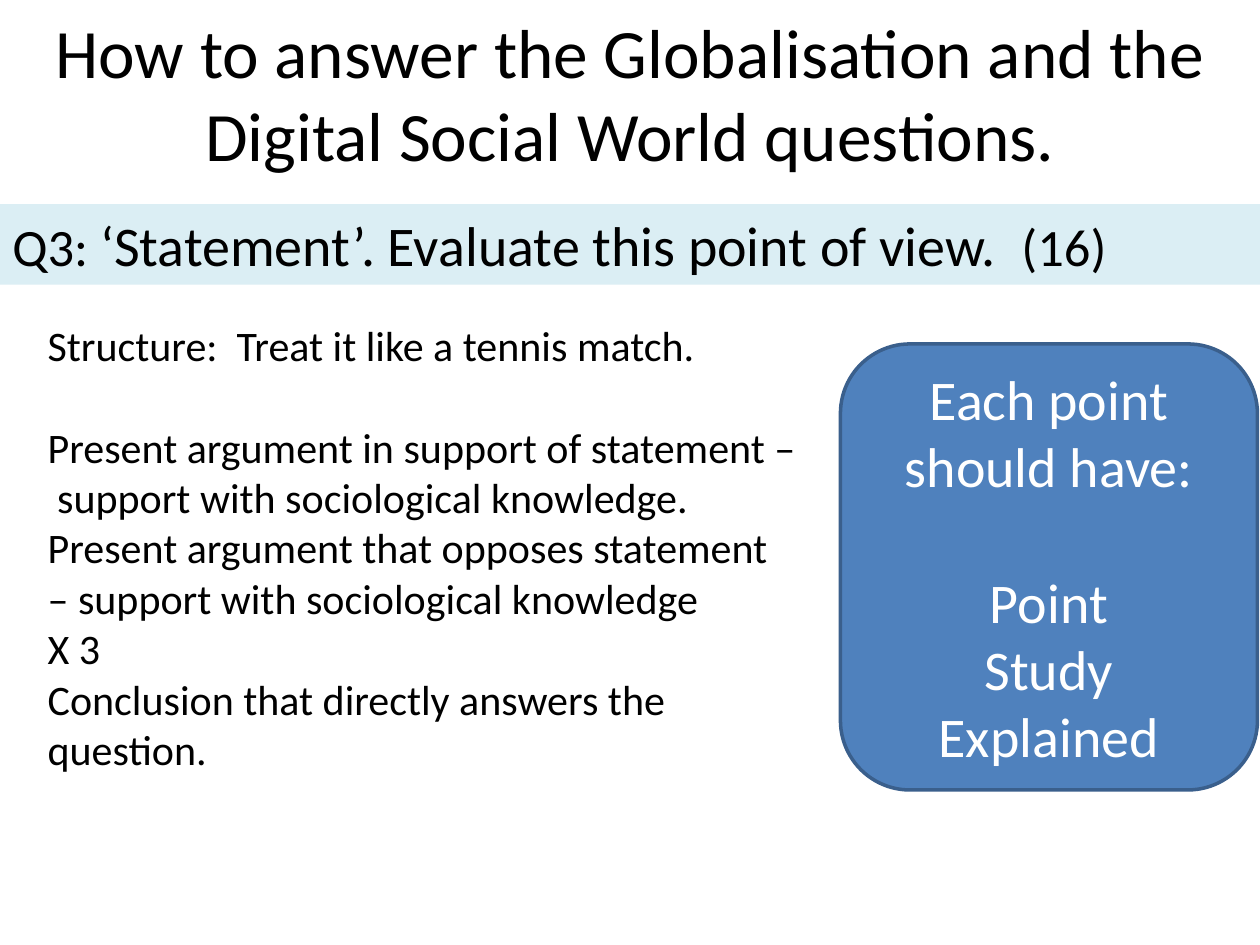
import pptx
import pptx.dml.color
import pptx.enum.shapes
import pptx.enum.text
import pptx.util

Inches = pptx.util.Inches
Pt = pptx.util.Pt
Shapes = pptx.enum.shapes.MSO_SHAPE
Align = pptx.enum.text.PP_ALIGN
Anchor = pptx.enum.text.MSO_ANCHOR


def color(hex_value):
    return pptx.dml.color.RGBColor.from_string(hex_value)


def write(shape, lines, size, hex_value, align, anchor, first_gap=0):
    """Fill a shape with paragraphs; first_gap is the space in points after the first."""
    frame = shape.text_frame
    frame.word_wrap = True
    frame.vertical_anchor = anchor
    for index, line in enumerate(lines):
        paragraph = frame.add_paragraph() if index else frame.paragraphs[0]
        paragraph.text = line
        paragraph.alignment = align
        paragraph.font.name = "Calibri"
        paragraph.font.size = Pt(size)
        paragraph.font.color.rgb = color(hex_value)
    frame.paragraphs[0].space_after = Pt(first_gap)


presentation = pptx.Presentation()
presentation.slide_width = Inches(10)
presentation.slide_height = Inches(7.5)
slide = presentation.slides.add_slide(presentation.slide_layouts[6])

title = slide.shapes.add_textbox(Inches(0), Inches(0), Inches(10), Inches(1.47))
write(title, ["How to answer the Globalisation and the Digital Social World questions."],
      39.6, "000000", Align.CENTER, Anchor.MIDDLE)

structure = slide.shapes.add_textbox(Inches(0.28), Inches(2.49), Inches(6.14), Inches(4.54))
structure_lines = [
    "Structure:  Treat it like a tennis match.",
    "Present argument in support of statement –  support with sociological knowledge.",
    "Present argument that opposes statement – support with sociological knowledge",
    "X 3",
    "Conclusion that directly answers the question.",
]
write(structure, structure_lines, 24, "000000", Align.LEFT, Anchor.TOP, first_gap=29)

question = slide.shapes.add_shape(
    Shapes.RECTANGLE, Inches(0), Inches(1.62), Inches(10), Inches(0.64))
question.shadow.inherit = False
question.fill.solid()
question.fill.fore_color.rgb = color("DBEEF4")
question.line.fill.background()
write(question, [""], 30, "000000", Align.LEFT, Anchor.TOP)
question_parts = [("Q3: ", 30), ("‘Statement’. Evaluate this point of view. ", 32), (" (16)", 30)]
for text, size in question_parts:
    run = question.text_frame.paragraphs[0].add_run()
    run.text = text
    run.font.size = Pt(size)

checklist = slide.shapes.add_shape(
    Shapes.ROUNDED_RECTANGLE, Inches(6.67), Inches(2.73), Inches(3.31), Inches(3.54))
checklist.shadow.inherit = False
checklist.fill.solid()
checklist.fill.fore_color.rgb = color("4F81BD")
checklist.line.color.rgb = color("3A5F8C")
checklist.line.width = Pt(2)
write(checklist, ["Each point should have:", "Point", "Study", "Explained"],
      32, "FFFFFF", Align.CENTER, Anchor.MIDDLE, first_gap=39)

presentation.save("out.pptx")
